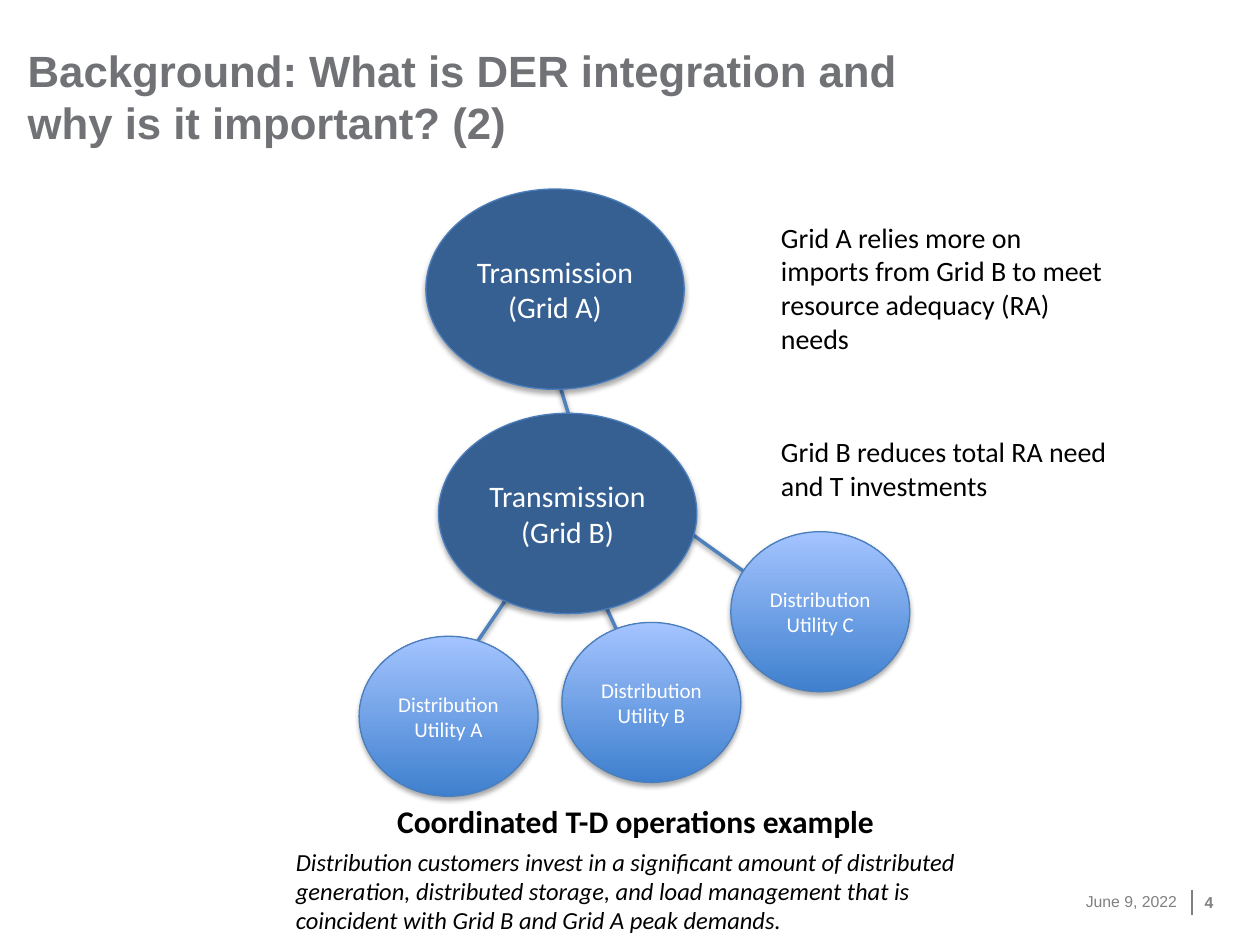
from dataclasses import dataclass, field

from lxml import etree
from pptx import Presentation
from pptx.dml.color import RGBColor
from pptx.enum.shapes import MSO_CONNECTOR, MSO_SHAPE
from pptx.enum.text import MSO_ANCHOR, PP_ALIGN
from pptx.oxml.ns import qn
from pptx.util import Inches, Pt

STRAIGHT = MSO_CONNECTOR.STRAIGHT
OVAL = MSO_SHAPE.OVAL
TOP, MIDDLE, BOTTOM = MSO_ANCHOR.TOP, MSO_ANCHOR.MIDDLE, MSO_ANCHOR.BOTTOM
LEFT, CENTER, RIGHT = PP_ALIGN.LEFT, PP_ALIGN.CENTER, PP_ALIGN.RIGHT

COLORS = {
    "title": "707276",
    "footer": "808080",
    "black": "000000",
    "white": "FFFFFF",
    "link": "4F81BD",
    "outline": "4B7EBC",
    "transmission": "376092",
    "utility_bottom": "3F80CE",
    "utility_top": "A4C4FF",
}
PADDING = (0.1, 0.05, 0.1, 0.05)
NO_PADDING = (0, 0, 0, 0)
TITLE = {"name": "Arial", "size": Pt(25), "bold": True}
FOOTER = {"name": "Arial", "size": Pt(9)}
PAGE_NUMBER = {**FOOTER, "bold": True}
NOTE = {"name": "Calibri", "size": Pt(16)}
CAPTION = {"name": "Calibri", "size": Pt(18), "bold": True}
DETAIL = {"name": "Calibri", "size": Pt(14), "italic": True}
TRANSMISSION = {"name": "Calibri", "size": Pt(17)}
UTILITY = {"name": "Calibri", "size": Pt(12)}


@dataclass
class Label:
    text: str
    at: tuple[float, float, float, float]
    font: dict
    color: str = "black"
    align: PP_ALIGN = LEFT
    anchor: MSO_ANCHOR = TOP
    padding: tuple[float, float, float, float] = PADDING


@dataclass
class Link:
    start: tuple[float, float]
    end: tuple[float, float]
    color: str = "link"
    width: float = 2
    shadow: bool = True


@dataclass
class Node:
    lines: list[str]
    left: float
    top: float
    size: tuple[float, float] = (1.42, 1.27)
    font: dict = field(default_factory=lambda: UTILITY)
    fill: tuple[str, ...] = ("utility_bottom", "utility_top")


def rgb(name: str) -> RGBColor:
    return RGBColor.from_string(COLORS[name])


def write_text(frame, lines: list[str], font: dict, color: str, align: PP_ALIGN,
               anchor: MSO_ANCHOR, padding: tuple) -> None:
    left, top, right, bottom = map(Inches, padding)
    layout = {"word_wrap": True, "vertical_anchor": anchor, "margin_left": left,
              "margin_top": top, "margin_right": right, "margin_bottom": bottom}
    for key, value in layout.items():
        setattr(frame, key, value)
    for index, line in enumerate(lines):
        para = frame.add_paragraph() if index else frame.paragraphs[0]
        para.alignment = align
        span = para.add_run()
        span.text = line
        for key, value in font.items():
            setattr(span.font, key, value)
        span.font.color.rgb = rgb(color)


def set_shadow(item, opacity: int = 0, distance: float = 0) -> None:
    properties = item._element.find(qn("p:spPr"))
    effects = etree.SubElement(properties, qn("a:effectLst"))
    if opacity:
        shadow = etree.SubElement(effects, qn("a:outerShdw"), blurRad=str(Pt(3.1)),
                                  dist=str(Pt(distance)), dir="5400000", rotWithShape="0")
        color = etree.SubElement(shadow, qn("a:srgbClr"), val=COLORS["black"])
        etree.SubElement(color, qn("a:alpha"), val=str(opacity * 1000))


def draw_label(page, label: Label) -> None:
    box = page.shapes.add_textbox(*map(Inches, label.at))
    write_text(box.text_frame, [label.text], label.font, label.color,
               label.align, label.anchor, label.padding)


def draw_link(page, link: Link) -> None:
    line = page.shapes.add_connector(STRAIGHT, *map(Inches, link.start + link.end))
    line.line.color.rgb = rgb(link.color)
    line.line.width = Pt(link.width)
    if link.shadow:
        set_shadow(line, 38, 1.6)
    else:
        set_shadow(line)


def draw_node(page, node: Node) -> None:
    oval = page.shapes.add_shape(OVAL, *map(Inches, (node.left, node.top, *node.size)))
    if len(node.fill) > 1:
        oval.fill.gradient()
        oval.fill.gradient_angle = 90
        for stop, name in zip(oval.fill.gradient_stops, node.fill):
            stop.color.rgb = rgb(name)
    else:
        oval.fill.solid()
        oval.fill.fore_color.rgb = rgb(node.fill[0])
    oval.line.color.rgb = rgb("outline")
    oval.line.width = Pt(0.75)
    set_shadow(oval, 35, 1.8)
    write_text(oval.text_frame, node.lines, node.font, "white", CENTER, MIDDLE, PADDING)


def transmission(operator: str, left: float, top: float) -> Node:
    return Node([f"Transmission ({operator})"], left, top, (2.05, 1.59),
                TRANSMISSION, ("transmission",))


LABELS = [
    Label("June 9, 2022", (8.03, 6.95, 1.31, 0.4), FOOTER, "footer", RIGHT, MIDDLE, NO_PADDING),
    Label("4", (9.56, 6.96, 0.25, 0.4), PAGE_NUMBER, "footer", LEFT, MIDDLE, (0, 0, 0.1, 0)),
    Label("Background: What is DER integration and why is it important? (2)",
          (0.22, 0.3, 7.3, 0.88), TITLE, "title", LEFT, BOTTOM, NO_PADDING),
    Label("Grid A relies more on imports from Grid B to meet resource adequacy (RA) needs",
          (6.1, 1.7, 2.84, 1.18), NOTE),
    Label("Grid B reduces total RA need and T investments", (6.1, 3.4, 2.94, 0.64), NOTE),
    Label("Distribution customers invest in a significant amount of distributed generation, "
          "distributed storage, and load management that is coincident with Grid B and "
          "Grid A peak demands.", (2.25, 6.67, 5.49, 0.81), DETAIL),
    Label("Coordinated T-D operations example", (2.79, 6.32, 4.51, 0.4), CAPTION, align=CENTER),
]
LINKS = [
    Link((9.46, 7.06), (9.46, 7.26), "footer", 1, False),
    Link((5.34, 4.13), (5.91, 4.54)),
    Link((4.76, 4.71), (4.95, 5.12)),
    Link((4.09, 4.65), (3.77, 5.12)),
    Link((4.4, 2.92), (4.51, 3.28)),
]
NODES = [
    transmission("Grid B", 3.48, 3.28),
    Node(["Distribution Utility C"], 5.8, 4.22),
    transmission("Grid A", 3.38, 1.5),
    Node(["Distribution", "Utility B"], 4.46, 4.94),
    Node(["Distribution", "Utility A"], 2.85, 5.05),
]


def main() -> None:
    deck = Presentation()
    deck.slide_width, deck.slide_height = Inches(10), Inches(7.5)
    page = deck.slides.add_slide(deck.slide_layouts[6])
    for draw, items in ((draw_label, LABELS), (draw_link, LINKS), (draw_node, NODES)):
        for item in items:
            draw(page, item)
    deck.save("out.pptx")


if __name__ == "__main__":
    main()
